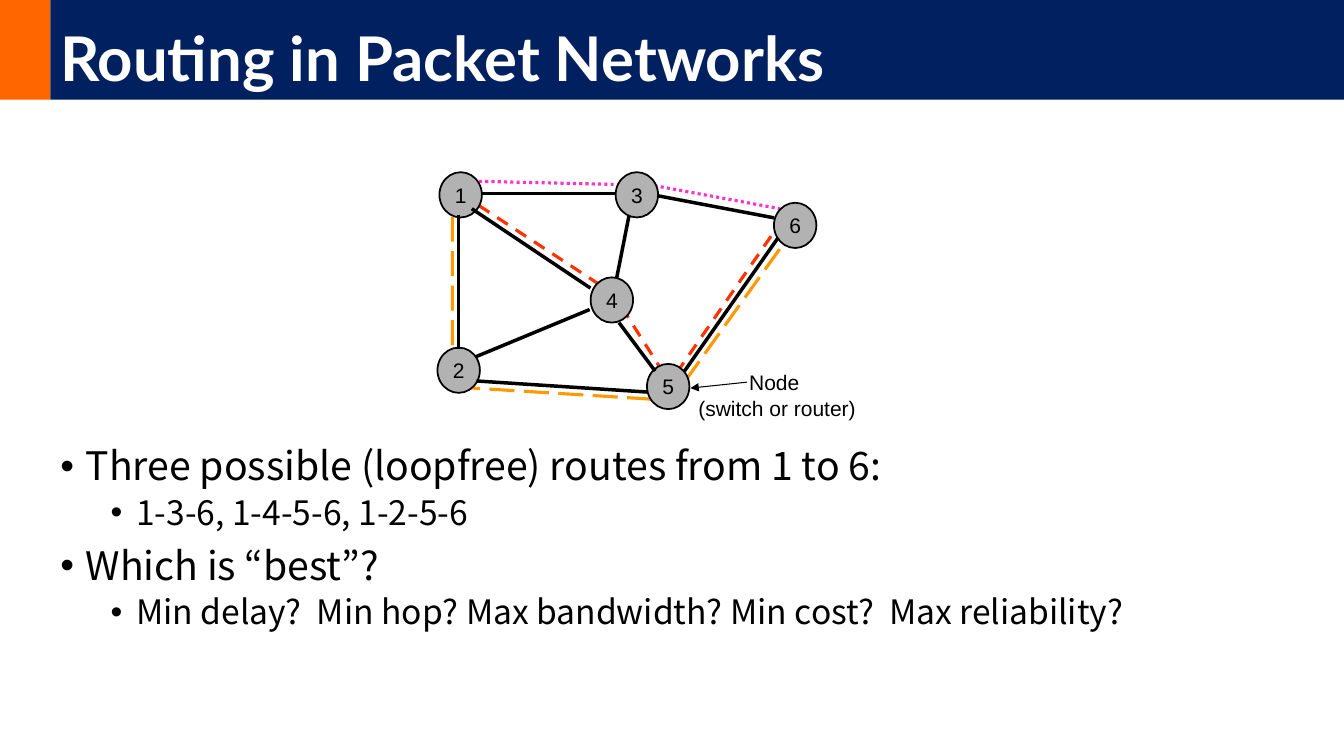
from dataclasses import dataclass

from lxml import etree
from pptx import Presentation
from pptx.dml.color import RGBColor
from pptx.enum.dml import MSO_LINE
from pptx.enum.shapes import MSO_CONNECTOR, MSO_SHAPE
from pptx.enum.text import MSO_ANCHOR, PP_ALIGN
from pptx.oxml.ns import qn
from pptx.util import Cm, Pt

STRAIGHT = MSO_CONNECTOR.STRAIGHT
RECT, OVAL = MSO_SHAPE.RECTANGLE, MSO_SHAPE.OVAL
CENTER = PP_ALIGN.CENTER
MIDDLE, BOTTOM = MSO_ANCHOR.MIDDLE, MSO_ANCHOR.BOTTOM
DASH, DOT, LONG_DASH = MSO_LINE.DASH, MSO_LINE.ROUND_DOT, MSO_LINE.LONG_DASH


@dataclass(frozen=True)
class Theme:
    navy: str = "002060"
    orange: str = "FF6600"
    white: str = "FFFFFF"
    black: str = "000000"
    node: str = "B2B2B2"
    route_red: str = "FF3300"
    route_pink: str = "FF33CC"
    route_amber: str = "FF9900"
    title_font: str = "Lato"
    body_font: str = "Noto Sans CJK KR"
    label_font: str = "Arial"
    title_size: int = 44
    body_sizes: tuple = (28, 24)
    label_size: int = 15


T = Theme()

NODE_W, NODE_H = 1.07, 1.14
NODES = {  # label: centre in cm
    "1": (11.61, 4.91), "2": (11.56, 9.33), "3": (16.05, 4.91),
    "4": (15.42, 7.56), "5": (16.84, 9.74), "6": (20.04, 5.68),
}
LINKS = [
    (12.14, 4.88, 15.52, 4.88),
    (15.85, 5.44, 15.54, 7.01),
    (15.6, 8.13, 16.51, 9.35),
    (16.56, 4.93, 19.51, 5.49),
    (17.25, 9.35, 19.61, 5.99),
    (16.33, 9.88, 12.01, 9.6),
    (11.56, 5.41, 11.56, 8.79),
    (11.89, 5.26, 14.88, 7.26),
    (14.86, 7.8, 11.99, 8.99),
]
ROUTES = [
    (T.route_red, DASH, [(12.07, 5.18), (15.06, 7.14), (15.8, 7.95), (16.66, 9.3),
                         (16.92, 9.37), (17.12, 9.3), (19.51, 5.84)]),
    (T.route_pink, DOT, [(12.07, 4.57), (15.6, 4.65), (16.61, 4.7), (19.66, 5.26)]),
    (T.route_amber, LONG_DASH, [(11.4, 5.46), (11.4, 8.81), (11.28, 9.5), (11.48, 9.73),
                                (11.91, 9.78), (16.43, 10.06), (16.94, 10.11),
                                (17.27, 9.73), (17.32, 9.53), (19.74, 6.15)]),
]
BULLETS = [
    (0, "Three possible (loopfree) routes from 1 to 6:"),
    (1, "1-3-6, 1-4-5-6, 1-2-5-6"),
    (0, "Which is “best”?"),
    (1, "Min delay?  Min hop? Max bandwidth? Min cost?  Max reliability?"),
]


def rgb(color):
    return RGBColor.from_string(color)


def add_run(p, text, size, font, color=T.black, bold=False):
    r = p.add_run()
    r.text = text
    r.font.size, r.font.name, r.font.bold = Pt(size), font, bold
    r.font.color.rgb = rgb(color)


def set_frame(tf, margin=0, wrap=True, anchor=None):
    tf.margin_left = tf.margin_right = tf.margin_top = tf.margin_bottom = Cm(margin)
    tf.word_wrap = wrap
    if anchor is not None:
        tf.vertical_anchor = anchor


def add_block(s, kind, x, y, w, h, fill, line=None):
    sp = s.shapes.add_shape(kind, Cm(x), Cm(y), Cm(w), Cm(h))
    sp.shadow.inherit = False
    sp.fill.solid()
    sp.fill.fore_color.rgb = rgb(fill)
    if line:
        sp.line.color.rgb, sp.line.width = rgb(line), Pt(1.25)
    else:
        sp.line.fill.background()
    return sp


def add_title(s, text):
    sp = add_block(s, RECT, 1.27, 0, 32.6, 2.51, T.navy)
    tf = sp.text_frame
    set_frame(tf, anchor=BOTTOM)
    tf.margin_left, tf.margin_bottom = Cm(0.25), Cm(0.13)
    p = tf.paragraphs[0]
    p.alignment, p.line_spacing = PP_ALIGN.LEFT, 0.9
    add_run(p, text, T.title_size, T.title_font, T.white, bold=True)


def add_route(s, color, dash, points):
    (x, y), *rest = [(Cm(px), Cm(py)) for px, py in points]
    builder = s.shapes.build_freeform(x, y)
    builder.add_line_segments(rest, close=False)
    sp = builder.convert_to_shape()
    sp.shadow.inherit = False
    sp.fill.background()
    sp.line.color.rgb, sp.line.width = rgb(color), Pt(2.25)
    sp.line.dash_style = dash


def add_node(s, label, cx, cy):
    sp = add_block(s, OVAL, cx - NODE_W / 2, cy - NODE_H / 2, NODE_W, NODE_H, T.node, T.black)
    set_frame(sp.text_frame, wrap=False, anchor=MIDDLE)
    p = sp.text_frame.paragraphs[0]
    p.alignment = CENTER
    add_run(p, label, T.label_size, T.label_font)


def add_line(s, x1, y1, x2, y2, width=2.5, arrow=False):
    c = s.shapes.add_connector(STRAIGHT, Cm(x1), Cm(y1), Cm(x2), Cm(y2))
    c.line.color.rgb, c.line.width = rgb(T.black), Pt(width)
    if arrow:
        etree.SubElement(c.line._get_or_add_ln(), qn("a:tailEnd"), type="triangle")
    etree.SubElement(c._element.spPr, qn("a:effectLst"))


def add_caption(s, lines):
    tf = s.shapes.add_textbox(Cm(17.58), Cm(9.32), Cm(4.01), Cm(1.3)).text_frame
    set_frame(tf, wrap=False)
    for i, text in enumerate(lines):
        p = tf.add_paragraph() if i else tf.paragraphs[0]
        p.alignment = CENTER
        add_run(p, text, T.label_size, T.label_font)


def set_bullet(p, level):
    pPr = p._p.get_or_add_pPr()
    pPr.set("marL", str(Cm(0.64 + 1.27 * level)))
    pPr.set("indent", str(-Cm(0.64)))
    etree.SubElement(pPr, qn("a:buFont"), typeface=T.label_font)
    etree.SubElement(pPr, qn("a:buChar"), char="•")


def add_bullets(s, items):
    tf = s.shapes.add_textbox(Cm(1.27), Cm(11.13), Cm(31.09), Cm(6.93)).text_frame
    set_frame(tf, margin=0.13)
    tf.margin_left = tf.margin_right = Cm(0.25)
    for i, (level, text) in enumerate(items):
        p = tf.add_paragraph() if i else tf.paragraphs[0]
        p.level, p.line_spacing = level, 0.9
        p.space_before = Pt(5 if level else 10)
        set_bullet(p, level)
        add_run(p, text, T.body_sizes[level], T.body_font)


def main():
    prs = Presentation()
    prs.slide_width, prs.slide_height = Cm(33.87), Cm(19.05)
    s = prs.slides.add_slide(prs.slide_layouts[6])
    add_block(s, RECT, 0, 0, 1.27, 2.51, T.orange)
    for color, dash, points in ROUTES:
        add_route(s, color, dash, points)
    for label, (cx, cy) in NODES.items():
        add_node(s, label, cx, cy)
    for link in LINKS:
        add_line(s, *link)
    add_caption(s, ["Node ", "(switch or router)"])
    add_line(s, 18.82, 9.63, 17.4, 9.78, width=0.75, arrow=True)
    add_title(s, "Routing in Packet Networks")
    add_bullets(s, BULLETS)
    prs.save("out.pptx")


if __name__ == "__main__":
    main()
